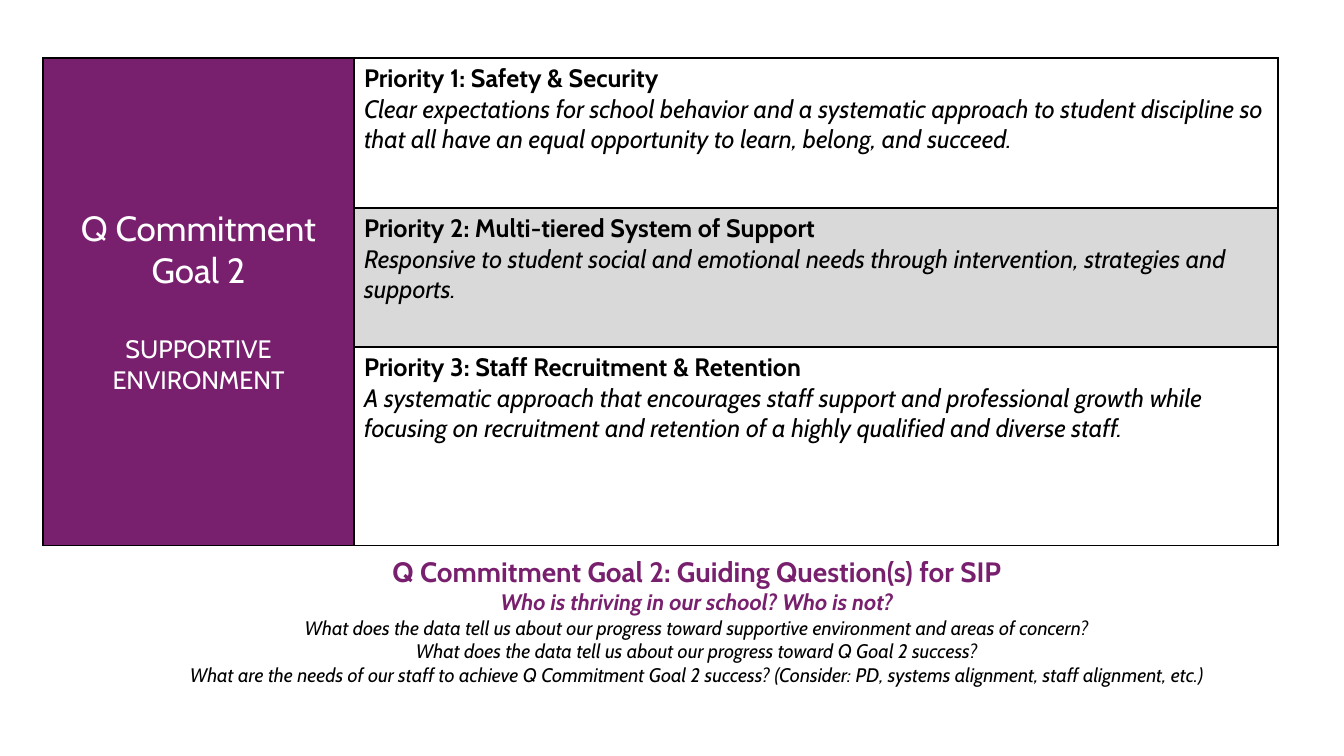
from lxml import etree
from pptx import Presentation
from pptx.dml.color import RGBColor
from pptx.enum.text import MSO_ANCHOR as Anchor, PP_ALIGN as Align
from pptx.oxml.ns import qn
from pptx.util import Pt

FONT = "Cabin"
PURPLE, BLACK, WHITE, GRAY = "78206E", "000000", "FFFFFF", "D9D9D9"

GOAL_LINES = [("Q Commitment", 25, 0), ("Goal 2", 25, 0), ("SUPPORTIVE ENVIRONMENT", 18, 30)]
PRIORITIES = [
    ("Priority 1: Safety & Security",
     "Clear expectations for school behavior and a systematic approach to student "
     "discipline so that all have an equal opportunity to learn, belong, and succeed.",
     WHITE),
    ("Priority 2: Multi-tiered System of Support",
     "Responsive to student social and emotional needs through intervention, "
     "strategies and supports.",
     GRAY),
    ("Priority 3: Staff Recruitment & Retention",
     "A systematic approach that encourages staff support and professional growth while "
     "focusing on recruitment and retention of a highly qualified and diverse staff.",
     WHITE),
]
GUIDING_HEADING = "Q Commitment Goal 2: Guiding Question(s) for SIP"
GUIDING_LEAD = "Who is thriving in our school? Who is not?"
QUESTIONS = [
    "What does the data tell us about our progress toward supportive environment and areas of concern?",
    "What does the data tell us about our progress toward Q Goal 2 success?",
    "What are the needs of our staff to achieve Q Commitment Goal 2 success? "
    "(Consider: PD, systems alignment, staff alignment, etc.)",
]

SLIDE_SIZE = (1344, 756)
TABLE_LEFT, TABLE_TOP = 43, 58
COLUMN_WIDTHS = [311, 924]
ROW_HEIGHTS = [150, 139, 149]
GUIDING_BOX = (130, 550, 1134, 194)


def px(length):
    return round(length * 914400 / 100.8)


def color(value):
    return RGBColor.from_string(value)


def add_run(paragraph, text, size, text_color=BLACK, bold=False, italic=False):
    run = paragraph.add_run()
    run.text = text
    font = run.font
    font.name, font.size = FONT, Pt(size)
    font.bold, font.italic = bold, italic
    font.color.rgb = color(text_color)


def add_paragraph(frame, first, align=Align.LEFT):
    paragraph = frame.paragraphs[0] if first else frame.add_paragraph()
    paragraph.alignment = align
    return paragraph


def set_borders(cell):
    properties = cell._tc.get_or_add_tcPr()
    for index, side in enumerate(("lnL", "lnR", "lnT", "lnB")):
        line = etree.Element(qn(f"a:{side}"), w=str(Pt(1)))
        fill = etree.SubElement(line, qn("a:solidFill"))
        etree.SubElement(fill, qn("a:srgbClr"), val=BLACK)
        properties.insert(index, line)


def fill_cell(cell, fill_color):
    cell.fill.solid()
    cell.fill.fore_color.rgb = color(fill_color)
    set_borders(cell)


def add_goal_table(slide):
    shape = slide.shapes.add_table(
        len(ROW_HEIGHTS), len(COLUMN_WIDTHS), px(TABLE_LEFT), px(TABLE_TOP),
        px(sum(COLUMN_WIDTHS)), px(sum(ROW_HEIGHTS)))
    table = shape.table
    table.first_row = table.horz_banding = False
    for column, width in zip(table.columns, COLUMN_WIDTHS):
        column.width = px(width)
    for row, height in zip(table.rows, ROW_HEIGHTS):
        row.height = px(height)

    goal_cell = table.cell(0, 0)
    goal_cell.merge(table.cell(len(ROW_HEIGHTS) - 1, 0))
    goal_cell.vertical_anchor = Anchor.MIDDLE
    for index, (text, size, space) in enumerate(GOAL_LINES):
        paragraph = add_paragraph(goal_cell.text_frame, index == 0, Align.CENTER)
        paragraph.space_before = Pt(space)
        add_run(paragraph, text, size, WHITE)

    for index, (heading, description, fill_color) in enumerate(PRIORITIES):
        fill_cell(table.cell(index, 0), PURPLE)
        cell = table.cell(index, 1)
        fill_cell(cell, fill_color)
        paragraph = add_paragraph(cell.text_frame, True)
        add_run(paragraph, heading, 18, bold=True)
        paragraph.add_line_break()
        add_run(paragraph, description, 18, italic=True)


def add_guiding_questions(slide):
    frame = slide.shapes.add_textbox(*map(px, GUIDING_BOX)).text_frame
    frame.word_wrap = True
    paragraph = add_paragraph(frame, True, Align.CENTER)
    add_run(paragraph, GUIDING_HEADING, 20, PURPLE, bold=True)
    paragraph.add_line_break()
    add_run(paragraph, GUIDING_LEAD, 16, PURPLE, bold=True, italic=True)
    for question in QUESTIONS:
        add_run(add_paragraph(frame, False, Align.CENTER), question, 14, italic=True)


def main():
    presentation = Presentation()
    presentation.slide_width, presentation.slide_height = map(px, SLIDE_SIZE)
    slide = presentation.slides.add_slide(presentation.slide_layouts[6])
    add_goal_table(slide)
    add_guiding_questions(slide)
    presentation.save("out.pptx")


if __name__ == "__main__":
    main()
